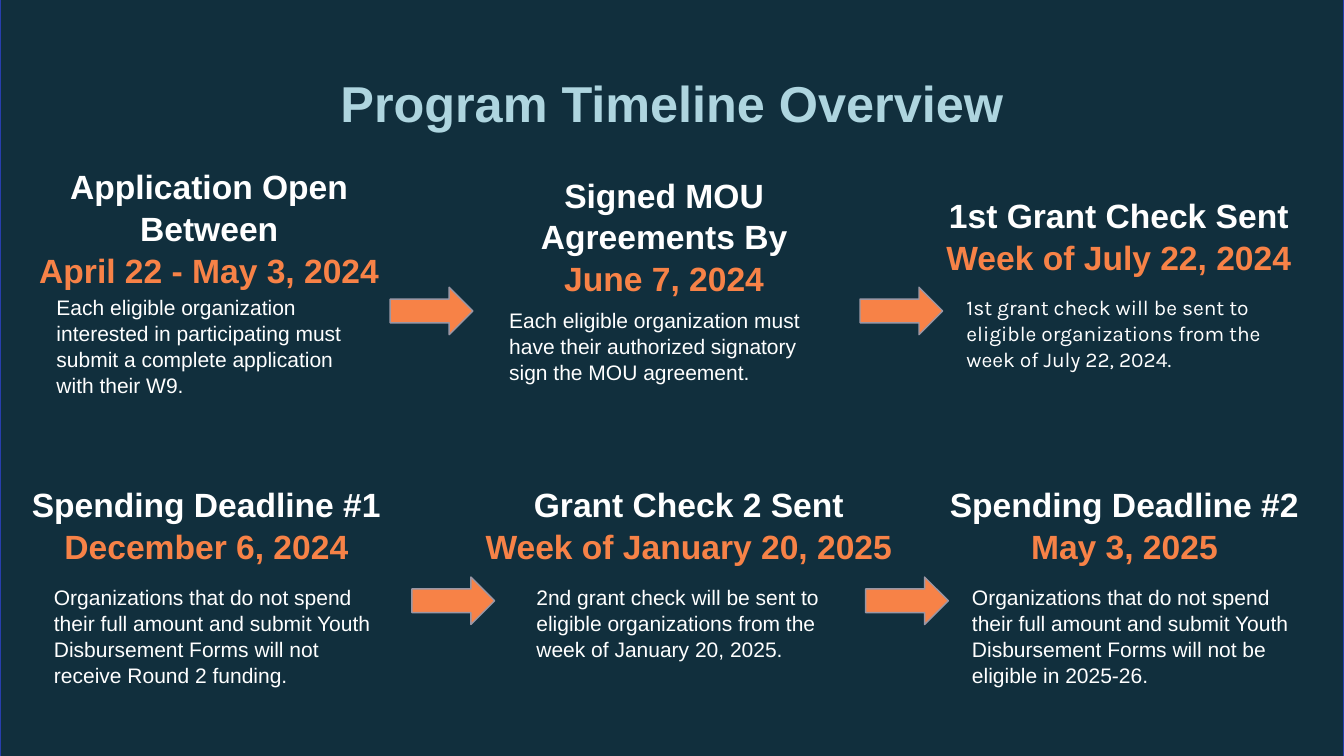
from typing import NamedTuple

from pptx import Presentation
from pptx.dml.color import RGBColor
from pptx.enum.shapes import MSO_SHAPE as Shape
from pptx.enum.text import MSO_ANCHOR as Anchor, MSO_AUTO_SIZE as Fit, PP_ALIGN as Align
from pptx.shapes.autoshape import Shape as Auto
from pptx.slide import Slide
from pptx.text.text import TextFrame, _Paragraph as Para
from pptx.util import Inches, Pt

NAVY = RGBColor(0x11, 0x2F, 0x3D)
BLUE = RGBColor(0x28, 0x3E, 0xAD)
PALE = RGBColor(0xAE, 0xD5, 0xDF)
WHITE = RGBColor(0xFF, 0xFF, 0xFF)
ORANGE = RGBColor(0xF7, 0x82, 0x47)
GRAY = RGBColor(0x9A, 0x96, 0xA4)
SPACING = 1.04
TOP, LOW = 5.7, 11.45


class Box(NamedTuple):
    left: float
    top: float
    width: float
    height: float


class Step(NamedTuple):
    name: str
    date: str
    head: Box
    text: str
    body: Box
    font: str = "Arial"


STEPS = [
    Step("Application Open Between", "April 22 - May 3, 2024", Box(-0.14, 3.15, 8.58, 2.66),
         "Each eligible organization interested in participating must submit "
         "a complete application with their W9.", Box(0.88, TOP, 6.54, 2.26)),
    Step("Signed MOU Agreements By", "June 7, 2024", Box(9.31, 3.31, 7.73, 2.66),
         "Each eligible organization must have their authorized signatory "
         "sign the MOU agreement.", Box(9.86, 5.96, 6.96, 1.76)),
    Step("1st Grant Check Sent", "Week of July 22, 2024", Box(18.21, 3.71, 7.97, 1.86),
         "1st grant check will be sent to eligible organizations from the "
         "week of July 22, 2024.", Box(18.93, TOP, 6.54, 1.76), "Karla"),
    Step("Spending Deadline #1", "December 6, 2024", Box(0.23, 9.45, 7.73, 1.86),
         "Organizations that do not spend their full amount and submit Youth "
         "Disbursement Forms will not receive Round 2 funding.", Box(0.83, LOW, 7.14, 2.26)),
    Step("Grant Check 2 Sent", "Week of January 20, 2025", Box(8.93, 9.45, 9.47, 1.86),
         "2nd grant check will be sent to eligible organizations from the "
         "week of January 20, 2025.", Box(10.4, LOW, 6.54, 1.76)),
    Step("Spending Deadline #2", "May 3, 2025", Box(18.44, 9.45, 7.73, 1.86),
         "Organizations that do not spend their full amount and submit Youth "
         "Disbursement Forms will not be eligible in 2025-26.", Box(19.04, LOW, 7.14, 2.26)),
]
ARROWS = [(7.74, TOP), (17.06, TOP), (8.17, LOW), (17.17, LOW)]


def style(para: Para, size: int, color: RGBColor, font: str = "Arial",
          bold: bool = False, align: Align = Align.LEFT) -> None:
    para.alignment = align
    para.line_spacing = SPACING
    para.font.name = font
    para.font.size = Pt(size)
    para.font.bold = bold
    para.font.color.rgb = color


def set_frame(frame: TextFrame, side: float, edge: float) -> None:
    frame.word_wrap = True
    frame.auto_size = Fit.SHAPE_TO_FIT_TEXT
    frame.vertical_anchor = Anchor.TOP
    frame.margin_left = frame.margin_right = Inches(side)
    frame.margin_top = frame.margin_bottom = Inches(edge)


def add_text(slide: Slide, box: Box) -> TextFrame:
    frame = slide.shapes.add_textbox(*map(Inches, box)).text_frame
    set_frame(frame, 0.24, 0.12)
    return frame


def add_step(slide: Slide, step: Step) -> None:
    head = add_text(slide, step.head)
    head.text = f"{step.name}\n{step.date}"
    for para, color in zip(head.paragraphs, (WHITE, ORANGE)):
        style(para, 48, color, bold=True, align=Align.CENTER)
    body = add_text(slide, step.body)
    body.text = step.text
    style(body.paragraphs[0], 30, WHITE, step.font)


def add_solid(slide: Slide, kind: Shape, box: Box, fill: RGBColor, line: RGBColor) -> Auto:
    shape = slide.shapes.add_shape(kind, *map(Inches, box))
    shape.shadow.inherit = False
    shape.fill.solid()
    shape.fill.fore_color.rgb = fill
    shape.line.color.rgb = line
    shape.line.width = Pt(2)
    return shape


def add_title(slide: Slide, text: str, box: Box) -> None:
    title = slide.shapes.title
    title.left, title.top, title.width, title.height = map(Inches, box)
    set_frame(title.text_frame, 0.1, 0.05)
    title.text_frame.text = text
    style(title.text_frame.paragraphs[0], 72, PALE, bold=True, align=Align.CENTER)


def main() -> None:
    deck = Presentation()
    deck.slide_width, deck.slide_height = Inches(26.66), Inches(15)
    slide = deck.slides.add_slide(deck.slide_layouts[5])
    panel = add_solid(slide, Shape.RECTANGLE, Box(0, -0.14, 26.66, 15.46), NAVY, BLUE)
    slide.shapes.title.element.addprevious(panel.element)
    add_title(slide, "Program Timeline Overview", Box(5.18, 1.33, 16.3, 1.31))
    for step in STEPS:
        add_step(slide, step)
    for left, top in ARROWS:
        add_solid(slide, Shape.RIGHT_ARROW, Box(left, top, 1.64, 0.94), ORANGE, GRAY)
    deck.save("out.pptx")


if __name__ == "__main__":
    main()
